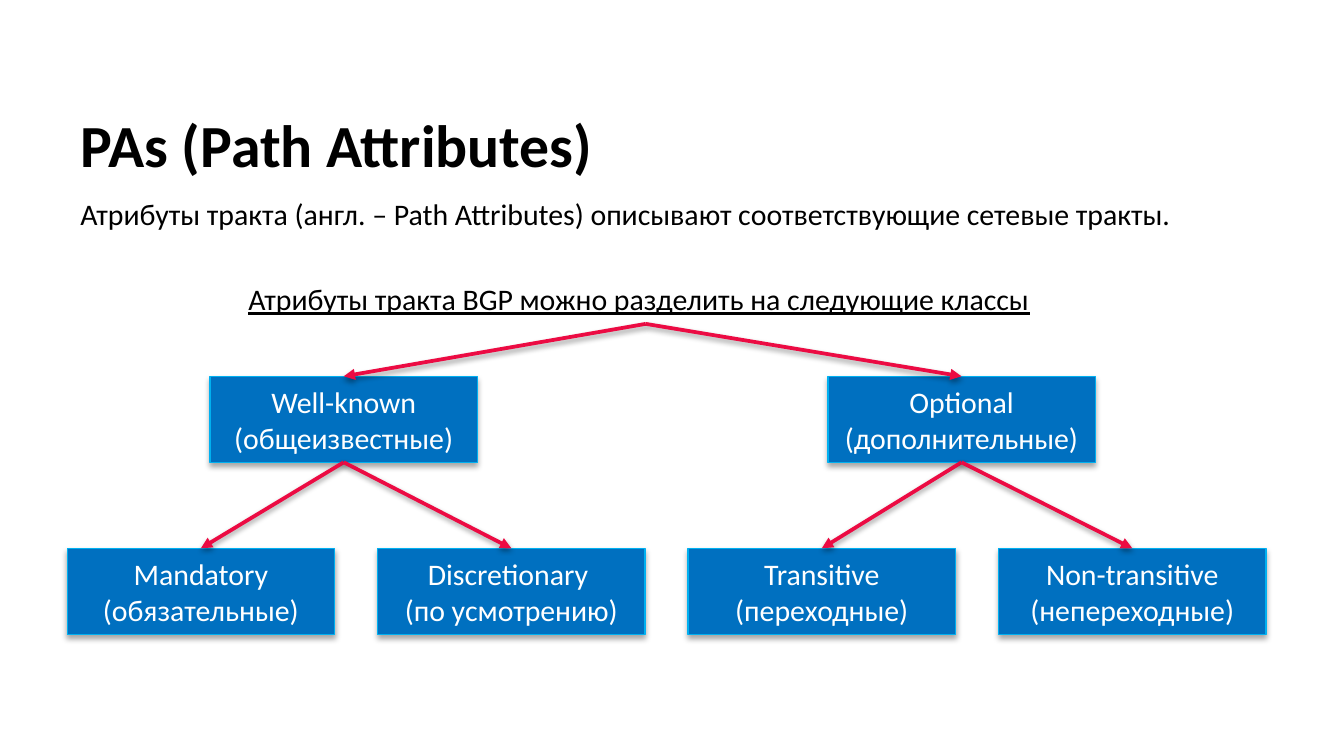
from lxml.etree import SubElement
from pptx import Presentation
from pptx.dml.color import RGBColor
from pptx.enum.shapes import MSO_CONNECTOR as Connector, MSO_SHAPE as Shape
from pptx.enum.text import MSO_ANCHOR as Anchor, MSO_AUTO_SIZE as AutoSize, PP_ALIGN as Align
from pptx.oxml.ns import qn
from pptx.util import Inches, Pt

COLORS = {"text": "000000", "label": "FFFFFF", "box": "0070C0",
          "border": "00B0F0", "arrow": "EC0B43", "shadow": "000000"}
FONT = "Calibri"
WIDTH = 10
HEIGHT = WIDTH * 9 / 16

# Class grid: four columns, measured in column steps from the left margin
MARGIN, STEP = 0.5, 2.31
BOX_W, BOX_H = 1.99, 0.64
CLASS_ROW, SUBCLASS_ROW = 2.8, 4.08
TOP, BOTTOM = 0, 2  # connection sites of a rectangle

# Class: column, caption, subclasses
CLASSES = [
    (0.46, "Well-known (общеизвестные)",
     [(0, "Mandatory (обязательные)"), (1, "Discretionary \n(по усмотрению)")]),
    (2.45, "Optional (дополнительные)",
     [(2, "Transitive (переходные)"), (3, "Non-transitive (непереходные)")]),
]


def rgb(name):
    return RGBColor.from_string(COLORS[name])


def write(paragraph, text, size=16, color="text", bold=None, underline=None):
    run = paragraph.add_run()
    run.text = text
    font = run.font
    font.name, font.size, font.bold, font.underline = FONT, Pt(size), bold, underline
    font.color.rgb = rgb(color)


def add_shadow(effects, opacity, distance):
    outer = SubElement(effects, qn("a:outerShdw"), blurRad=str(Pt(3.1)),
                       dist=str(Pt(distance)), dir="5400000", rotWithShape="0")
    tint = SubElement(outer, qn("a:srgbClr"), val=COLORS["shadow"])
    SubElement(tint, qn("a:alpha"), val=str(opacity * 1000))


def add_title(slide, box, text):
    title = slide.shapes.title
    title.left, title.top, title.width, title.height = map(Inches, box)
    frame = title.text_frame
    frame.vertical_anchor = Anchor.MIDDLE
    frame.paragraphs[0].alignment = Align.LEFT
    write(frame.paragraphs[0], text, 32, bold=True)


def add_statement(slide, box, text, underline=None):
    statement = slide.shapes.add_textbox(*map(Inches, box))
    frame = statement.text_frame
    frame.word_wrap = True
    frame.auto_size = AutoSize.SHAPE_TO_FIT_TEXT
    write(frame.paragraphs[0], text, underline=underline)
    return statement


def add_class_box(slide, column, top, caption):
    box = (MARGIN + column * STEP, top, BOX_W, BOX_H)
    class_box = slide.shapes.add_shape(Shape.RECTANGLE, *map(Inches, box))
    class_box.fill.solid()
    class_box.fill.fore_color.rgb = rgb("box")
    class_box.line.color.rgb = rgb("border")
    class_box.line.width = Pt(0.75)
    class_box.shadow.inherit = False
    add_shadow(class_box._element.spPr.find(qn("a:effectLst")), 35, 1.8)
    frame = class_box.text_frame
    frame.word_wrap = True
    frame.vertical_anchor = Anchor.MIDDLE
    for index, line in enumerate(caption.split("\n")):
        paragraph = frame.add_paragraph() if index else frame.paragraphs[0]
        paragraph.alignment = Align.CENTER
        write(paragraph, line, color="label")
    return class_box


def add_arrow(slide, parent, child):
    arrow = slide.shapes.add_connector(Connector.STRAIGHT, 0, 0, 0, 0)
    arrow.begin_connect(parent, BOTTOM)
    arrow.end_connect(child, TOP)
    arrow.line.color.rgb = rgb("arrow")
    arrow.line.width = Pt(2)
    SubElement(arrow.line._get_or_add_ln(), qn("a:tailEnd"), type="triangle")
    add_shadow(SubElement(arrow._element.spPr, qn("a:effectLst")), 38, 1.6)


def add_class_tree(slide, root):
    for column, caption, subclasses in CLASSES:
        class_box = add_class_box(slide, column, CLASS_ROW, caption)
        add_arrow(slide, root, class_box)
        for sub_column, sub_caption in subclasses:
            subclass_box = add_class_box(slide, sub_column, SUBCLASS_ROW, sub_caption)
            add_arrow(slide, class_box, subclass_box)


def main():
    deck = Presentation()
    deck.slide_width, deck.slide_height = Inches(WIDTH), Inches(HEIGHT)
    slide = deck.slides.add_slide(deck.slide_layouts[5])

    # Heading and definition
    add_title(slide, (MARGIN, 0.73, 6.86, 0.68), "PAs (Path Attributes)")
    add_statement(slide, (MARGIN, 1.41, 9.08, 0.37),
                  "Атрибуты тракта (англ. – Path Attributes) описывают "
                  "соответствующие сетевые тракты.")

    # Classification tree
    root = add_statement(slide, (1.75, 2.04, 6.11, 0.37),
                         "Атрибуты тракта BGP можно разделить на следующие классы",
                         underline=True)
    add_class_tree(slide, root)
    deck.save("out.pptx")


if __name__ == "__main__":
    main()
